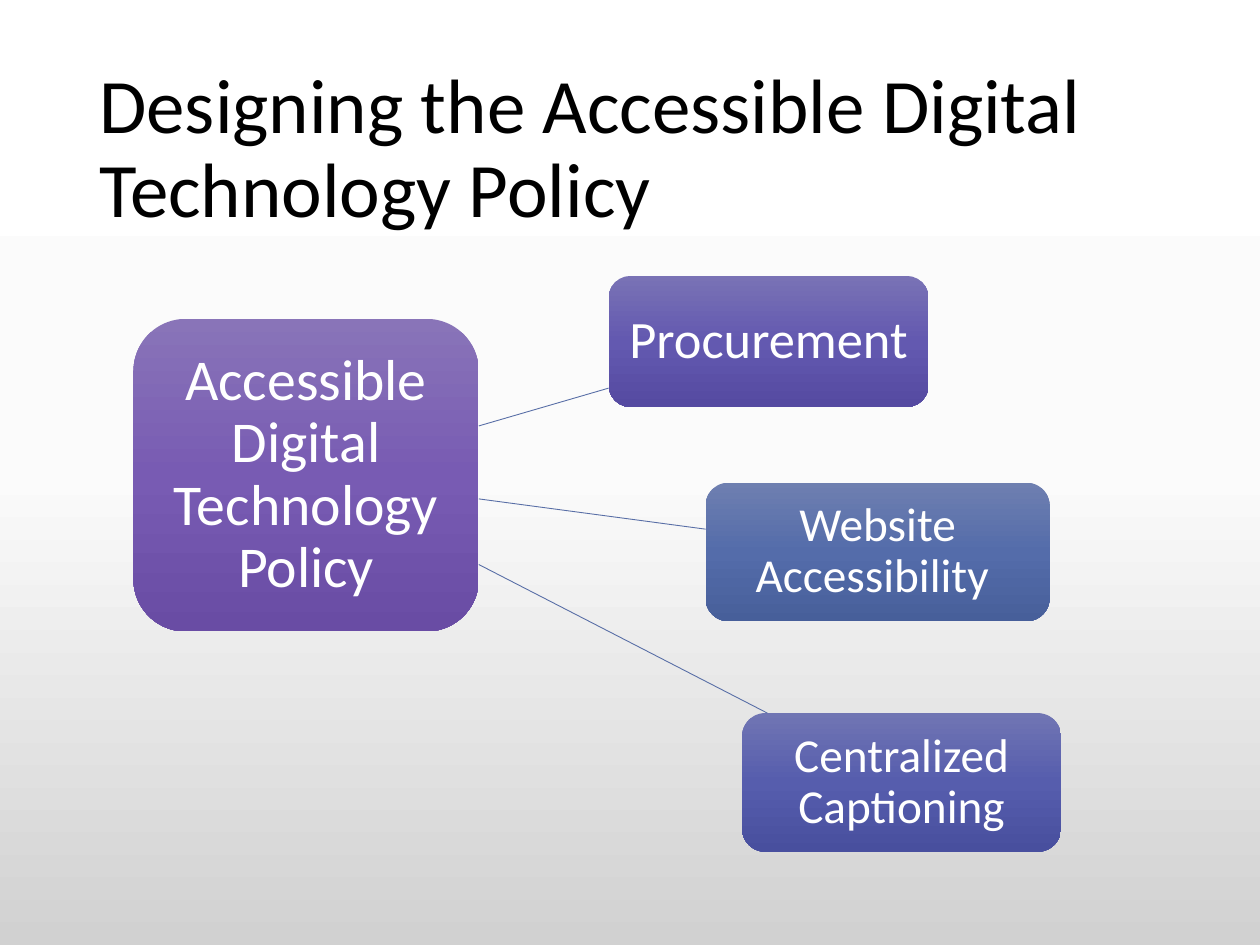
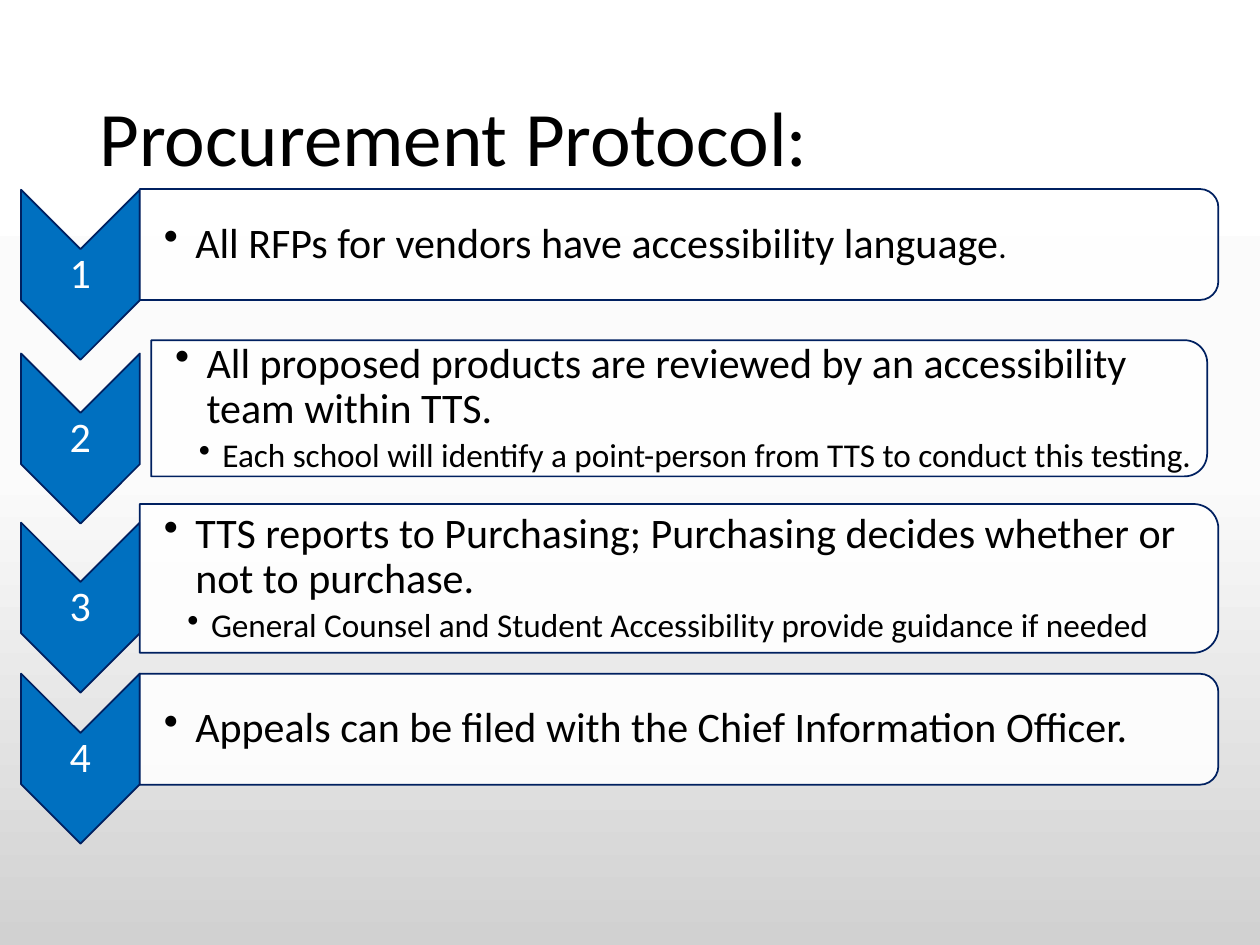
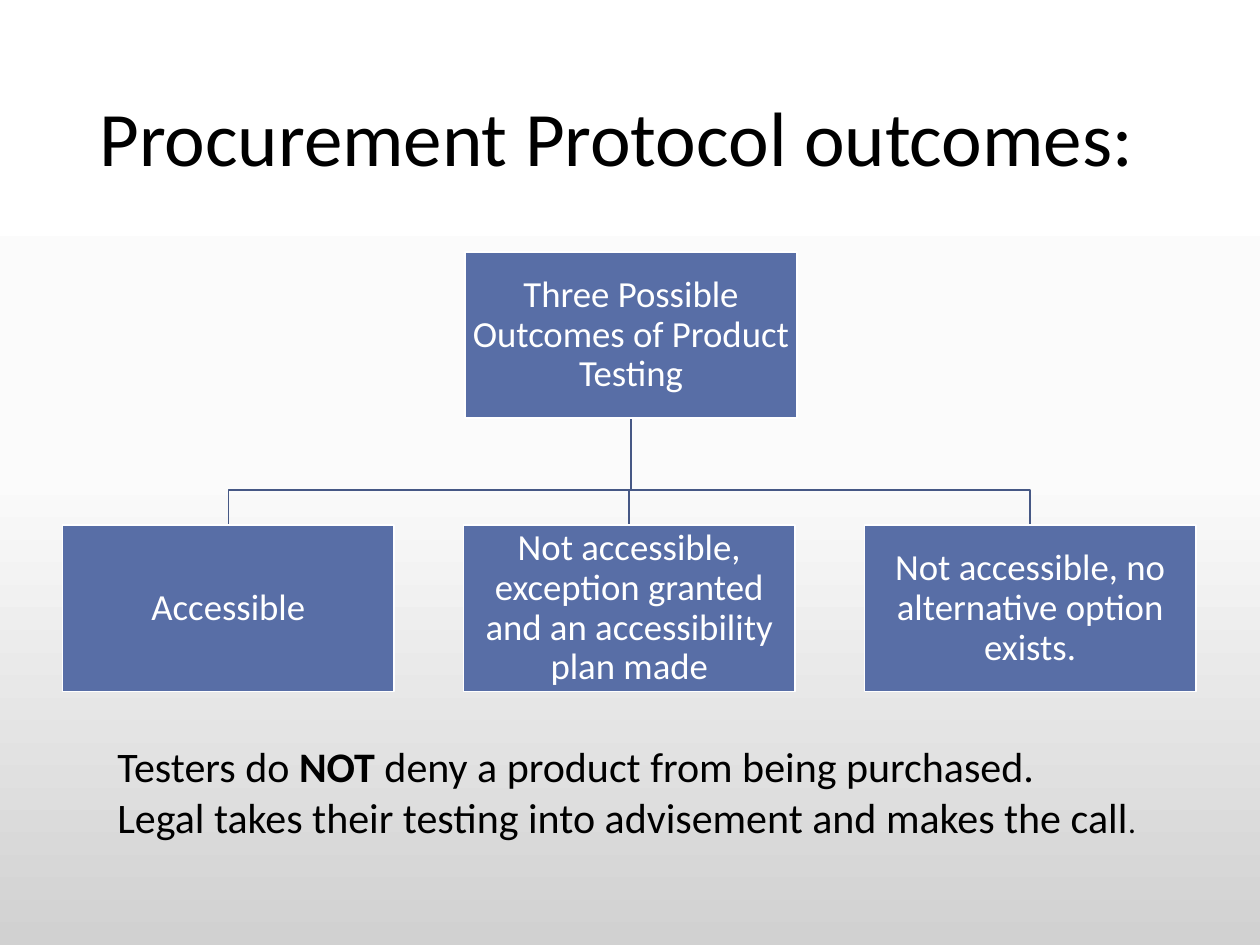
from copy import deepcopy

from lxml import etree
from pptx import Presentation
from pptx.dml.color import RGBColor
from pptx.enum import shapes as sh, text as tx
from pptx.oxml.ns import qn
from pptx.util import Pt

COLOURS = {
    "ink": "000000", "white": "FFFFFF", "link": "586EA6", "tree line": "465885",
    "outcome": "586EA6", "step": "0070C0", "step line": "002060",
}
GRADIENTS = {
    "page": ("FFFFFF", "FBFBFB", "D1D1D1"),
    "policy": ("8974B8", "785BB3", "694CA4"),
    "procurement": ("7972B5", "6359B0", "554AA1"),
    "captioning": ("7075B3", "565DAD", "484F9E"),
    "website": ("6E7FB0", "546CAA", "475F9A"),
}
LEFT = {"alignment": tx.PP_ALIGN.LEFT, "line_spacing": 0.9}
CENTRED = {"alignment": tx.PP_ALIGN.CENTER, "line_spacing": 0.9}
BULLET = {**LEFT, "space_after": Pt(3.6)}
# Per bullet level: left margin, hanging indent
LEVELS = {1: (18, -18), 2: (27, -13.5)}


def rgb(name):
    return RGBColor.from_string(COLOURS.get(name, name))


def assign(target, values):
    for key, value in values.items():
        setattr(target, key, value)


class Deck:
    """Holds the shared style and the slide being filled."""

    font = "Calibri"

    def __init__(self):
        self.prs = Presentation()
        assign(self.prs, {"slide_width": Pt(720), "slide_height": Pt(540)})
        master = self.prs.slide_master
        self.gradient(master.background.fill, master.element, "page")

    def slide(self, title, top=28.8):
        self.shapes = self.prs.slides.add_slide(self.prs.slide_layouts[6]).shapes
        self.label((49.7, top, 620.6, 104.4), [[(title, 44)]], LEFT, inset=(7.2, 3.6, 7.2, 3.6))

    def gradient(self, fill, owner, name):
        fill.gradient()
        fill.gradient_angle = 270
        stops = next(owner.iter(qn("a:gsLst")))
        stops.insert(1, deepcopy(stops[0]))
        for i, (stop, colour) in enumerate(zip(fill.gradient_stops, GRADIENTS[name])):
            stop.position = i / 2
            stop.color.rgb = rgb(colour)

    def set_text(self, shape, paragraphs, layout, colour="ink", inset=(0, 0, 0, 0),
                 anchor=tx.MSO_ANCHOR.MIDDLE):
        """Each paragraph is a list of (words, size[, bold]) runs."""
        frame = shape.text_frame
        sides = ("margin_left", "margin_top", "margin_right", "margin_bottom")
        assign(frame, {"word_wrap": True, "vertical_anchor": anchor,
                       **{side: Pt(gap) for side, gap in zip(sides, inset)}})
        for i, runs in enumerate(paragraphs):
            para = frame.add_paragraph() if i else frame.paragraphs[0]
            assign(para, layout)
            for words, size, *bold in runs:
                run = para.add_run()
                run.text = words
                assign(run.font, {"name": self.font, "size": Pt(size), "bold": bool(bold)})
                run.font.color.rgb = rgb(colour)
        return frame

    def label(self, box, paragraphs, layout, **style):
        return self.set_text(self.shapes.add_textbox(*map(Pt, box)), paragraphs, layout, **style)

    def bullets(self, box, items):
        """Each item is a level followed by its runs."""
        frame = self.label(box, [runs for _, *runs in items], BULLET,
                           inset=(13.7, 1.4, 1.4, 1.4))
        for para, (level, *_) in zip(frame.paragraphs, items):
            margin, indent = LEVELS[level]
            para.level = level
            props = para._p.get_or_add_pPr()
            props.set("marL", str(Pt(margin)))
            props.set("indent", str(Pt(indent)))
            etree.SubElement(props, qn("a:buChar"), char="•")

    def outline(self, shape, colour, width):
        shape.line.color.rgb = rgb(colour)
        shape.line.width = Pt(width)

    def block(self, preset, box, fill, line=None, turned=False, alpha=None):
        """A preset shape; box is its visible frame, even when turned by 90 degrees."""
        x, y, w, h = box
        if turned:
            x, y, w, h = x + (w - h) / 2, y + (h - w) / 2, h, w
        shape = self.shapes.add_shape(preset, *map(Pt, (x, y, w, h)))
        shape.shadow.inherit = False
        shape.rotation = 90 if turned else 0
        if fill in GRADIENTS:
            self.gradient(shape.fill, shape._element, fill)
        else:
            shape.fill.solid()
            shape.fill.fore_color.rgb = rgb(fill)
        if alpha:
            colour = next(shape._element.spPr.iter(qn("a:srgbClr")))
            etree.SubElement(colour, qn("a:alpha"), val=str(alpha * 1000))
        if line:
            self.outline(shape, line, 1)
        else:
            shape.line.fill.background()
        return shape

    def link(self, start, end):
        line = self.shapes.add_connector(sh.MSO_CONNECTOR.STRAIGHT, *map(Pt, start + end))
        self.outline(line, "link", 0.5)
        etree.SubElement(line._element.spPr, qn("a:effectLst"))

    def branch(self, *points):
        start, *rest = [(Pt(x), Pt(y)) for x, y in points]
        builder = self.shapes.build_freeform(*start)
        builder.add_line_segments(rest, close=False)
        elbow = builder.convert_to_shape()
        elbow.shadow.inherit = False
        elbow.fill.background()
        self.outline(elbow, "tree line", 1)


def policy_slide(deck):
    deck.slide("Designing the Accessible Digital Technology Policy", top=33.8)
    # Policy and its three areas: words, size, inset, frame, gradient
    areas = [
        ("Accessible Digital Technology Policy", 33, 6.5, (76.3, 182.2, 197.3, 178.6), "policy"),
        ("Procurement", 30, 5.8, (347.8, 157.7, 182.9, 74.9), "procurement"),
        ("Centralized Captioning", 27, 5, (424.1, 407.5, 182.2, 79.2), "captioning"),
        ("Website Accessibility ", 27, 5, (403.2, 275.8, 196.6, 79.2), "website"),
    ]
    for words, size, gap, box, fill in areas:
        area = deck.block(sh.MSO_SHAPE.ROUNDED_RECTANGLE, box, fill)
        deck.set_text(area, [[(words, size)]], CENTRED, colour="white", inset=(gap,) * 4)
    # Links from the right edge of the policy
    for start_y, end in [(243.4, (347.8, 221.8)), (322.6, (438.5, 407.5)), (285.1, (403.2, 302.4))]:
        deck.link((273.6, start_y), end)


def protocol_slide(deck):
    deck.slide("Procurement Protocol:")
    # Steps: chevron top, panel frame, bullets
    steps = [
        (108.4, (79.9, 108, 616.3, 63.4),
         [(1, ("All RFPs for vendors have accessibility language", 24), (".", 19))]),
        (202, (86.4, 194.4, 603.4, 77.8),
         [(1, ("All proposed products are reviewed by an accessibility team within TTS.", 24)),
          (2, ("Each school will identify a point-person from TTS to conduct this testing.", 19))]),
        (298.6, (79.9, 288, 616.3, 85),
         [(1, ("TTS reports to Purchasing; Purchasing decides whether or not to purchase.", 24)),
          (2, ("General Counsel and Student Accessibility provide guidance if needed", 19))]),
        (384.9, (79.9, 385, 616.3, 63.4),
         [(1, ("Appeals can be filed with the Chief Information Officer.", 24))]),
    ]
    for number, (top, panel, items) in enumerate(steps, 1):
        chevron = (12, top, 67.9, 97.2)
        deck.block(sh.MSO_SHAPE.CHEVRON, chevron, "step", "step line", turned=True)
        deck.label(chevron, [[(str(number), 24)]], CENTRED, colour="white", inset=(1.4,) * 4)
        deck.block(sh.MSO_SHAPE.ROUND_2_SAME_RECTANGLE, panel, "white", "step line",
                   turned=True, alpha=90)
        x, y, w, h = panel
        deck.bullets((x, y + 3, w - 4, h - 6), items)


def outcomes_slide(deck):
    deck.slide("Procurement Protocol outcomes:")
    width, height, root_x, root_y, row_y, fork_y = 189.4, 95, 265.9, 144, 300.2, 280.2
    outcomes = [
        "Accessible",
        "Not accessible, exception granted and an accessibility plan made",
        "Not accessible, no alternative option exists.",
    ]
    lefts = [35.8 + 229.1 * i for i in range(len(outcomes))]
    # Tree lines behind the boxes
    trunk = root_x + width / 2
    for left in lefts:
        middle = left + width / 2
        deck.branch((trunk, root_y + height), (trunk, fork_y), (middle, fork_y), (middle, row_y))
    # Root and outcomes
    boxes = [("Three Possible Outcomes of Product Testing", root_x, root_y)]
    boxes += [(words, left, row_y) for words, left in zip(outcomes, lefts)]
    for words, x, y in boxes:
        box = deck.block(sh.MSO_SHAPE.RECTANGLE, (x, y, width, height), "outcome", "white")
        deck.set_text(box, [[(words, 21)]], CENTRED, colour="white", inset=(1,) * 4)
    # Closing remark
    deck.label((60, 419.8, 648, 65.5), [
        [("Testers do ", 24), ("NOT", 24, True), (" deny a product from being purchased.", 24)],
        [("Legal takes their testing into advisement and makes the call", 24), (".", 18)],
    ], {}, inset=(7.2, 3.6, 7.2, 3.6), anchor=tx.MSO_ANCHOR.TOP)


def main():
    deck = Deck()
    for build in (policy_slide, protocol_slide, outcomes_slide):
        build(deck)
    deck.prs.save("out.pptx")


if __name__ == "__main__":
    main()
